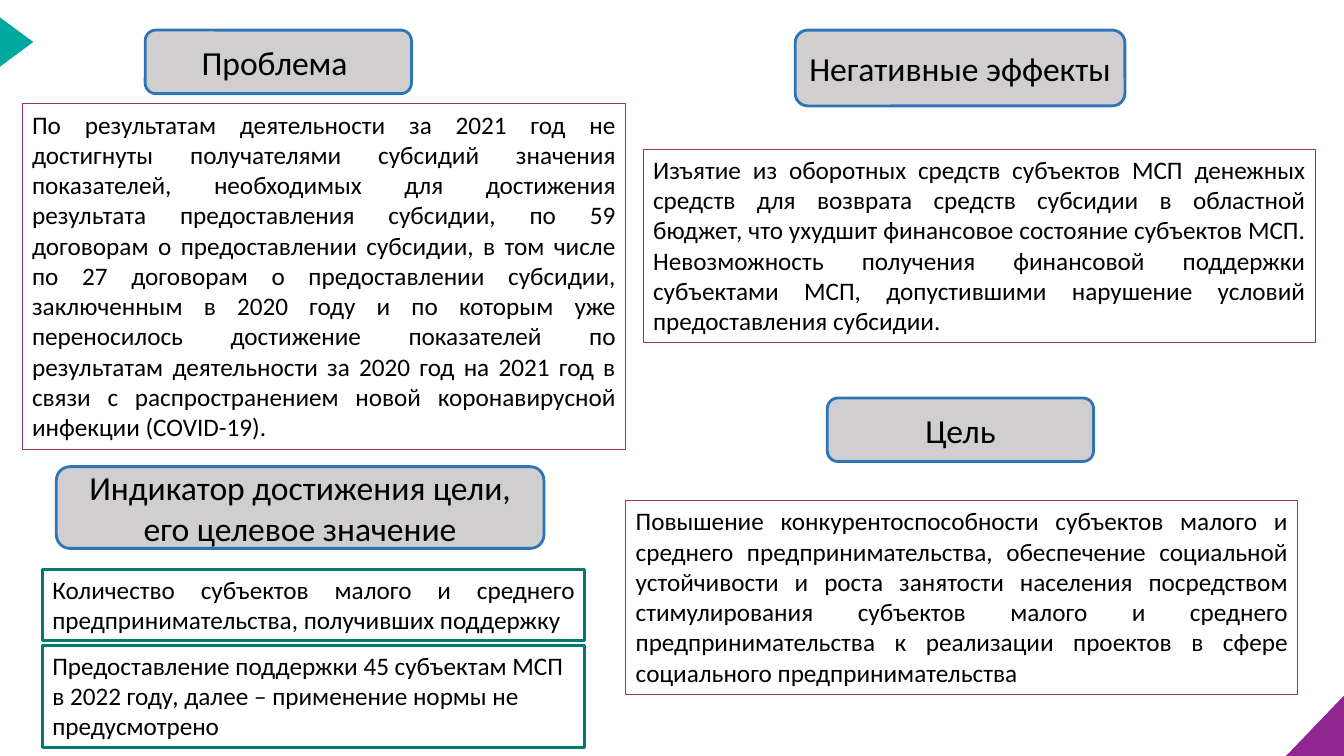
import pptx
import pptx.dml.color
import pptx.enum.shapes
import pptx.enum.text
import pptx.util

Cm, Pt = pptx.util.Cm, pptx.util.Pt
SHAPES = pptx.enum.shapes.MSO_SHAPE
ALIGN = pptx.enum.text.PP_ALIGN
ANCHOR = pptx.enum.text.MSO_ANCHOR
AUTO_SIZE = pptx.enum.text.MSO_AUTO_SIZE

# Content: text, left, top, width, height (cm)
HEADINGS = [
    ("Проблема ", 3.66, 0.76, 6.71, 1.6),
    ("Негативные эффекты ", 20.04, 0.76, 8.31, 1.91),
    ("Цель", 20.85, 10.03, 6.71, 1.6),
    ("Индикатор достижения цели, его целевое значение", 1.42, 11.76, 12.29, 2.06),
]
# Content: text, left, top, width, height (cm), frame style, alignment
STATEMENTS = [
    ("По результатам деятельности за 2021 год не достигнуты получателями субсидий "
     "значения показателей, необходимых для достижения результата предоставления "
     "субсидии, по 59 договорам о предоставлении субсидии, в том числе по 27 договорам "
     "о предоставлении субсидии, заключенным в 2020 году и по которым уже переносилось "
     "достижение показателей по результатам деятельности за 2020 год на 2021 год в связи "
     "с распространением новой коронавирусной инфекции (COVID-19). ",
     0.56, 2.62, 15.21, 8.71, "plum", ALIGN.JUSTIFY),
    ("Изъятие из оборотных средств субъектов МСП денежных средств для возврата средств "
     "субсидии в областной бюджет, что ухудшит финансовое состояние субъектов МСП. "
     "Невозможность получения финансовой поддержки субъектами МСП, допустившими "
     "нарушение условий предоставления субсидии.",
     16.21, 3.76, 16.94, 4.88, "plum", ALIGN.JUSTIFY),
    ("Повышение конкурентоспособности субъектов малого и среднего предпринимательства, "
     "обеспечение социальной устойчивости и роста занятости населения посредством "
     "стимулирования субъектов малого и среднего предпринимательства к реализации "
     "проектов в сфере социального предпринимательства ",
     15.77, 12.62, 16.94, 4.88, "plum", ALIGN.JUSTIFY),
    ("Количество субъектов малого и среднего предпринимательства, получивших поддержку",
     1.07, 14.35, 13.67, 1.8, "green", ALIGN.JUSTIFY),
    ("Предоставление поддержки 45 субъектам МСП в 2022 году, далее – применение нормы "
     "не предусмотрено",
     1.07, 16.26, 13.67, 2.57, "green", ALIGN.LEFT),
]
COLORS = {
    "teal": "00A99D", "purple": "902790", "plum": "993366", "green": "007A71",
    "grey": "D0CECE", "blue": "2E75B6", "text": "000000",
}
LINE_WIDTHS = {"plum": 0.75, "green": 2, "blue": 2}
SLIDE_WIDTH, SLIDE_HEIGHT = 33.87, 19.05


def color(name):
    return pptx.dml.color.RGBColor.from_string(COLORS[name])


def style(shape, fill=None, line=None):
    shape.shadow.inherit = False
    if fill:
        shape.fill.solid()
        shape.fill.fore_color.rgb = color(fill)
    else:
        shape.fill.background()
    if line:
        shape.line.color.rgb = color(line)
        shape.line.width = Pt(LINE_WIDTHS[line])
    else:
        shape.line.fill.background()


def add_box(slide, kind, box, text, size, alignment, anchor, fill, line):
    shape = slide.shapes.add_shape(kind, *map(Cm, box))
    style(shape, fill, line)
    frame = shape.text_frame
    frame.word_wrap = True
    frame.vertical_anchor = anchor
    paragraph = frame.paragraphs[0]
    paragraph.alignment = alignment
    run = paragraph.add_run()
    run.text = text
    run.font.size = Pt(size)
    run.font.name = "Calibri"
    run.font.color.rgb = color("text")
    return shape


def main():
    presentation = pptx.Presentation()
    presentation.slide_width = Cm(SLIDE_WIDTH)
    presentation.slide_height = Cm(SLIDE_HEIGHT)
    slide = presentation.slides.add_slide(presentation.slide_layouts[6])

    # Corner decorations
    pointer = slide.shapes.add_shape(
        SHAPES.ISOSCELES_TRIANGLE, Cm(-0.2), Cm(0.64), Cm(1.24), Cm(0.84))
    pointer.rotation = 90
    style(pointer, "teal")
    builder = slide.shapes.build_freeform(Cm(SLIDE_WIDTH - 1.46), Cm(SLIDE_HEIGHT))
    builder.add_line_segments([
        (Cm(SLIDE_WIDTH), Cm(SLIDE_HEIGHT - 1.52)),
        (Cm(SLIDE_WIDTH), Cm(SLIDE_HEIGHT)),
    ])
    style(builder.convert_to_shape(), "purple")

    # Framed statements
    for text, *box, line, alignment in STATEMENTS:
        shape = add_box(slide, SHAPES.RECTANGLE, box, text, 18, alignment,
                        ANCHOR.TOP, None, line)
        shape.text_frame.auto_size = AUTO_SIZE.SHAPE_TO_FIT_TEXT

    # Rounded headings
    for text, *box in HEADINGS:
        add_box(slide, SHAPES.ROUNDED_RECTANGLE, box, text, 24, ALIGN.CENTER,
                ANCHOR.MIDDLE, "grey", "blue")

    presentation.save("out.pptx")


if __name__ == "__main__":
    main()
